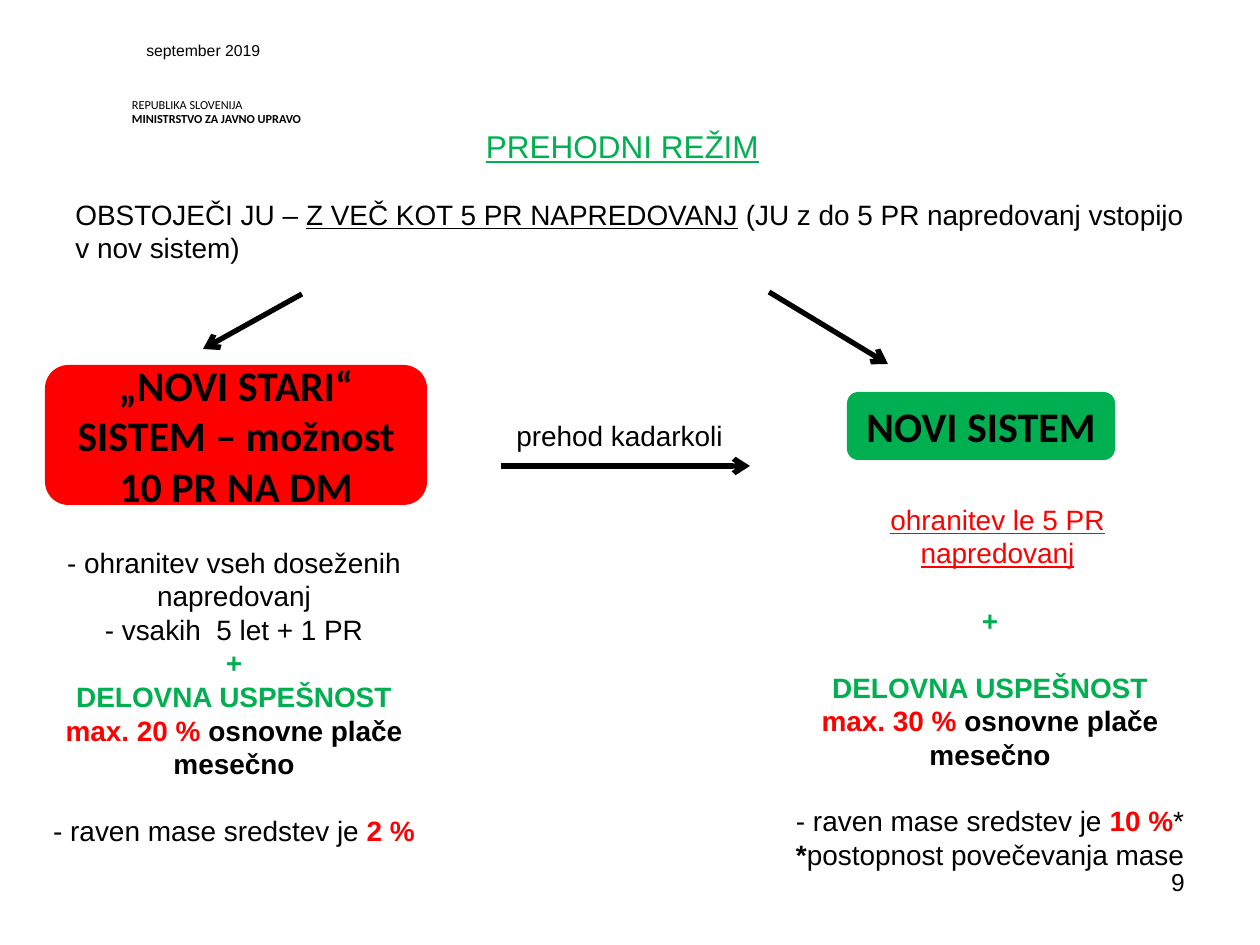
from lxml.etree import SubElement
from pptx import Presentation
from pptx.dml.color import RGBColor
from pptx.enum.shapes import MSO_CONNECTOR as CONNECTOR, MSO_SHAPE as SHAPE
from pptx.enum.text import MSO_ANCHOR as ANCHOR, PP_ALIGN as ALIGN
from pptx.oxml.ns import qn
from pptx.util import Pt

PX = 914400 / 126
BLACK, RED, GREEN = "000000", "FF0000", "00B050"
LEFT, CENTER, RIGHT = ALIGN.LEFT, ALIGN.CENTER, ALIGN.RIGHT
BLANK_LINE = 19  # points of space that set a group of lines apart

# A paragraph is (spans, space before); a span is (text, colour, style),
# where style holds "b" for bold and "u" for underline.


def line(text, color=BLACK, style="", before=0):
    return [(text, color, style)], before


def performance(limit, before):
    """Green heading and the bonus limit, shared by both systems."""
    return [
        line("DELOVNA USPEŠNOST", GREEN, "b", before),
        ([(f"max. {limit} % ", RED, "b"), ("osnovne plače mesečno", BLACK, "b")], 0),
    ]


MINISTRY = [line("REPUBLIKA SLOVENIJA"), line("MINISTRSTVO ZA JAVNO UPRAVO", style="b")]
INTRO = [([
    ("OBSTOJEČI JU – ", BLACK, ""),
    ("Z VEČ KOT 5 PR NAPREDOVANJ", BLACK, "u"),
    (" (JU z do 5 PR napredovanj vstopijo v nov sistem)", BLACK, ""),
], 0)]
OLD_SYSTEM = [
    line("- ohranitev vseh doseženih napredovanj"),
    line("- vsakih  5 let + 1 PR"),
    line("+", GREEN, "b"),
    *performance(20, 0),
    ([("- raven mase sredstev je ", BLACK, ""), ("2 %", RED, "b")], BLANK_LINE),
]
NEW_SYSTEM = [
    line("+", GREEN, "b"),
    *performance(30, BLANK_LINE),
    ([
        ("- raven mase sredstev je ", BLACK, ""),
        ("10 %", RED, "b"),
        ("* ", BLACK, ""),
        ("*", BLACK, "b"),
        ("postopnost povečevanja mase", BLACK, ""),
    ], BLANK_LINE),
]

# (left, top, width, height), size, alignment, paragraphs
TEXTS = [
    ((134, 35, 566, 32), 9, LEFT, [line("september 2019")]),
    ((62, 121, 1121, 98), 18, CENTER, [line("PREHODNI REŽIM", GREEN, "u")]),
    ((63, 191, 1134, 80), 16, LEFT, INTRO),
    ((11, 539, 446, 318), 16, CENTER, OLD_SYSTEM),
    ((503, 412, 233, 47), 16, CENTER, [line("prehod kadarkoli")]),
    ((819, 496, 357, 81), 16, CENTER,
     [line("ohranitev le 5 PR napredovanj", RED, "u")]),
    ((767, 597, 446, 284), 16, CENTER, NEW_SYSTEM),
    ((903, 861, 294, 66), 14, RIGHT, [line("9")]),
]
SYSTEM_BOXES = [
    ((45, 365, 382, 140), RED, "„NOVI STARI“ SISTEM – možnost 10 PR NA DM"),
    ((847, 392, 268, 68), GREEN, "NOVI SISTEM"),
]
ARROWS = [(302, 294, 203, 349), (769, 292, 888, 364), (501, 466, 750, 466)]


def emu(*lengths):
    return [round(length * PX) for length in lengths]


def rgb(color):
    return RGBColor.from_string(color)


def write(frame, paragraphs, size, align, font="Arial"):
    frame.word_wrap = True
    for index, (spans, before) in enumerate(paragraphs):
        para = frame.paragraphs[0] if index == 0 else frame.add_paragraph()
        para.alignment = align
        para.space_before = Pt(before)
        para.font.size = Pt(size)
        para.font.name = font
        for text, color, style in spans:
            span = para.add_run()
            span.text = text
            span.font.color.rgb = rgb(color)
            span.font.bold = "b" in style
            span.font.underline = "u" in style


def add_text(slide, place, size, align, paragraphs):
    box = slide.shapes.add_textbox(*emu(*place))
    write(box.text_frame, paragraphs, size, align)


def add_ministry(slide):
    frame = slide.shapes.add_textbox(*emu(132, 97, 267, 29)).text_frame
    frame.margin_left = frame.margin_top = frame.margin_right = frame.margin_bottom = 0
    write(frame, MINISTRY, 7, LEFT, "Calibri")
    for para in frame.paragraphs:
        para.line_spacing = Pt(8.4)


def add_system_box(slide, place, fill, text):
    box = slide.shapes.add_shape(SHAPE.ROUNDED_RECTANGLE, *emu(*place))
    box.shadow.inherit = False
    box.fill.solid()
    box.fill.fore_color.rgb = rgb(fill)
    box.line.fill.background()
    box.text_frame.vertical_anchor = ANCHOR.MIDDLE
    write(box.text_frame, [line(text, style="b")], 24, CENTER, "Calibri")


def add_arrow(slide, ends):
    arrow = slide.shapes.add_connector(CONNECTOR.STRAIGHT, *emu(*ends))
    arrow.line.color.rgb = rgb(BLACK)
    arrow.line.width = Pt(3)
    SubElement(arrow.line._get_or_add_ln(), qn("a:tailEnd"), type="arrow")
    SubElement(arrow._element.spPr, qn("a:effectLst"))


def main():
    deck = Presentation()
    deck.slide_width, deck.slide_height = emu(1260, 945)
    slide = deck.slides.add_slide(deck.slide_layouts[6])
    add_ministry(slide)
    for system_box in SYSTEM_BOXES:
        add_system_box(slide, *system_box)
    for ends in ARROWS:
        add_arrow(slide, ends)
    for text in TEXTS:
        add_text(slide, *text)
    deck.save("out.pptx")


if __name__ == "__main__":
    main()
